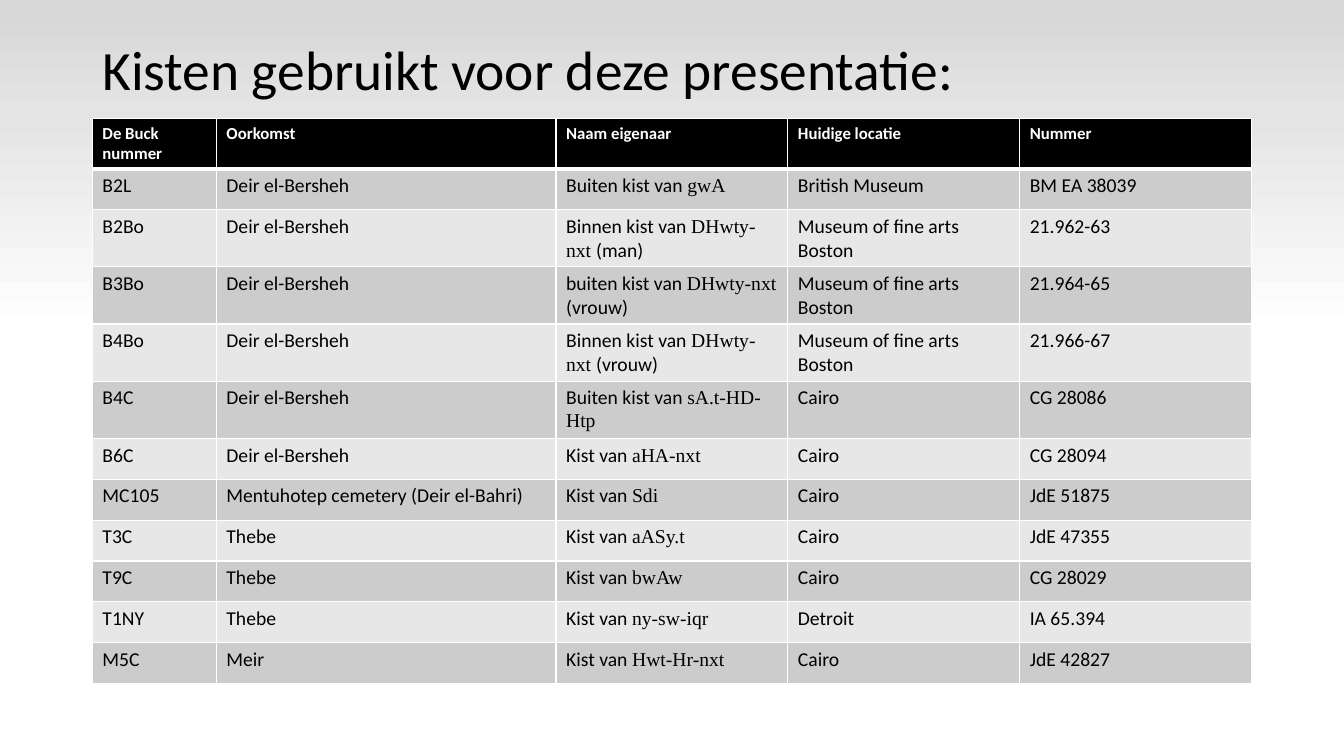
from lxml.etree import SubElement
from pptx import Presentation
from pptx.dml.color import RGBColor
from pptx.enum.text import MSO_ANCHOR
from pptx.oxml import parse_xml
from pptx.oxml.ns import nsdecls, qn
from pptx.util import Pt

BLACK = RGBColor(0x00, 0x00, 0x00)
WHITE = RGBColor(0xFF, 0xFF, 0xFF)
DARK = RGBColor(0xCC, 0xCC, 0xCC)
LIGHT = RGBColor(0xE7, 0xE7, 0xE7)
GREY = RGBColor(0xD7, 0xD7, 0xD7)
PALE = RGBColor(0xE4, 0xE4, 0xE4)

SANS, SERIF = "Calibri", "Times New Roman"
LEFT, WIDTH = 66, 828
COLS = [88.56, 242.64, 165.6, 165.6, 165.6]
ROW = 29.2
STOPS = [(0, GREY), (1, GREY), (15, PALE), (44, WHITE)]

# A bar switches between the plain font and the transliteration font
ROWS = [
    ("De Buck nummer", "Oorkomst", "Naam eigenaar", "Huidige locatie", "Nummer"),
    ("B2L", "Deir el-Bersheh", "Buiten kist van |gwA", "British Museum", "BM EA 38039"),
    ("B2Bo", "Deir el-Bersheh", "Binnen kist van |DHwty-nxt |(man)",
     "Museum of fine arts Boston", "21.962-63"),
    ("B3Bo", "Deir el-Bersheh", "buiten kist van |DHwty-nxt |(vrouw)",
     "Museum of fine arts Boston", "21.964-65"),
    ("B4Bo", "Deir el-Bersheh", "Binnen kist van |DHwty-nxt |(vrouw)",
     "Museum of fine arts Boston", "21.966-67"),
    ("B4C", "Deir el-Bersheh", "Buiten kist van |sA.t-HD-Htp", "Cairo", "CG 28086"),
    ("B6C", "Deir el-Bersheh", "Kist van |aHA-nxt", "Cairo", "CG 28094"),
    ("MC105", "Mentuhotep cemetery (Deir el-Bahri)", "Kist van |Sdi", "Cairo", "JdE 51875"),
    ("T3C", "Thebe", "Kist van |aASy.t", "Cairo", "JdE 47355"),
    ("T9C", "Thebe", "Kist van |bwAw", "Cairo", "CG 28029"),
    ("T1NY", "Thebe", "Kist van |ny-sw-iqr", "Detroit", "IA 65.394"),
    ("M5C", "Meir", "Kist van |Hwt-Hr-nxt", "Cairo", "JdE 42827"),
]


def style(font, size, color, bold=False):
    font.name, font.size, font.bold = SANS, Pt(size), bold
    font.color.rgb = color


def paint_back(slide):
    fill = slide.background.fill
    fill.gradient()
    fill.gradient_angle = 270
    # Replace the two default stops
    stops = next(slide.element.iter(qn("a:gsLst")))
    for stop in list(stops):
        stops.remove(stop)
    for place, color in STOPS:
        stop = SubElement(stops, qn("a:gs"), pos=str(place * 1000))
        SubElement(stop, qn("a:srgbClr"), val=str(color))


def add_title(slide, text):
    box = slide.shapes.add_textbox(Pt(LEFT), Pt(28.8), Pt(WIDTH), Pt(46))
    frame = box.text_frame
    frame.word_wrap = True
    frame.vertical_anchor = MSO_ANCHOR.MIDDLE
    para = frame.paragraphs[0]
    para.text = text
    para.line_spacing = 0.9
    style(para.font, 39.6, BLACK)


def set_edges(cell, top, bottom):
    props = cell._tc.get_or_add_tcPr()
    edges = [("lnL", 1), ("lnR", 1), ("lnT", top), ("lnB", bottom)]
    for spot, (tag, width) in enumerate(edges):
        props.insert(spot, parse_xml(
            f'<a:{tag} {nsdecls("a")} w="{Pt(width)}"><a:solidFill>'
            f'<a:srgbClr val="{WHITE}"/></a:solidFill></a:{tag}>'))


def fill_cell(cell, text, row):
    head = row == 0
    cell.fill.solid()
    cell.fill.fore_color.rgb = BLACK if head else DARK if row % 2 else LIGHT
    set_edges(cell, 3 if row == 1 else 1, 3 if head else 1)
    para = cell.text_frame.paragraphs[0]
    style(para.font, 12 if head else 14, WHITE if head else BLACK, head)
    for spot, part in enumerate(text.split("|")):
        run = para.add_run()
        run.text = part
        if spot % 2:
            run.font.name = SERIF


def add_grid(slide):
    frame = slide.shapes.add_table(len(ROWS), len(COLS), Pt(LEFT), Pt(84.5),
                                   Pt(WIDTH), Pt(ROW * len(ROWS)))
    table = frame.table
    for col, width in zip(table.columns, COLS):
        col.width = Pt(width)
    for row, texts in enumerate(ROWS):
        table.rows[row].height = Pt(ROW)
        for col, text in enumerate(texts):
            fill_cell(table.cell(row, col), text, row)


def main():
    deck = Presentation()
    deck.slide_width, deck.slide_height = Pt(960), Pt(540)
    slide = deck.slides.add_slide(deck.slide_layouts[6])
    paint_back(slide)
    add_title(slide, "Kisten gebruikt voor deze presentatie:")
    add_grid(slide)
    deck.save("out.pptx")


if __name__ == "__main__":
    main()
